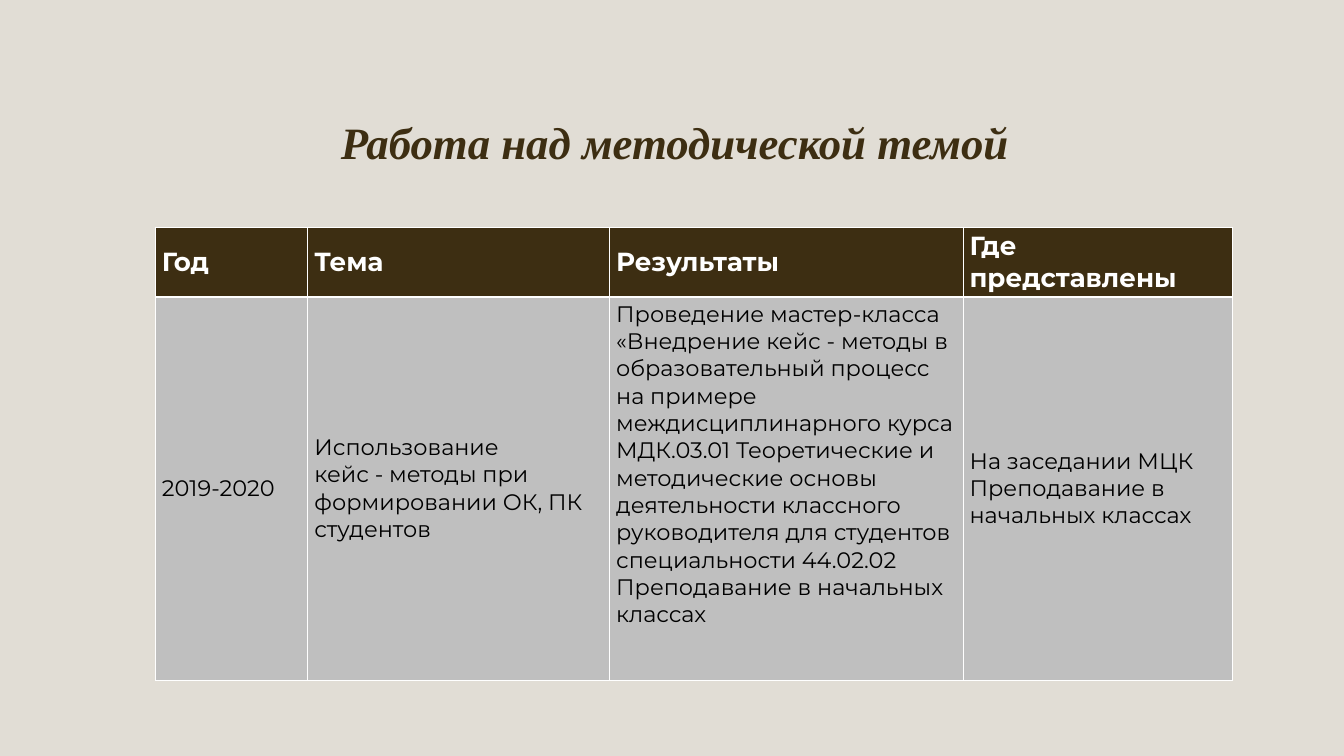
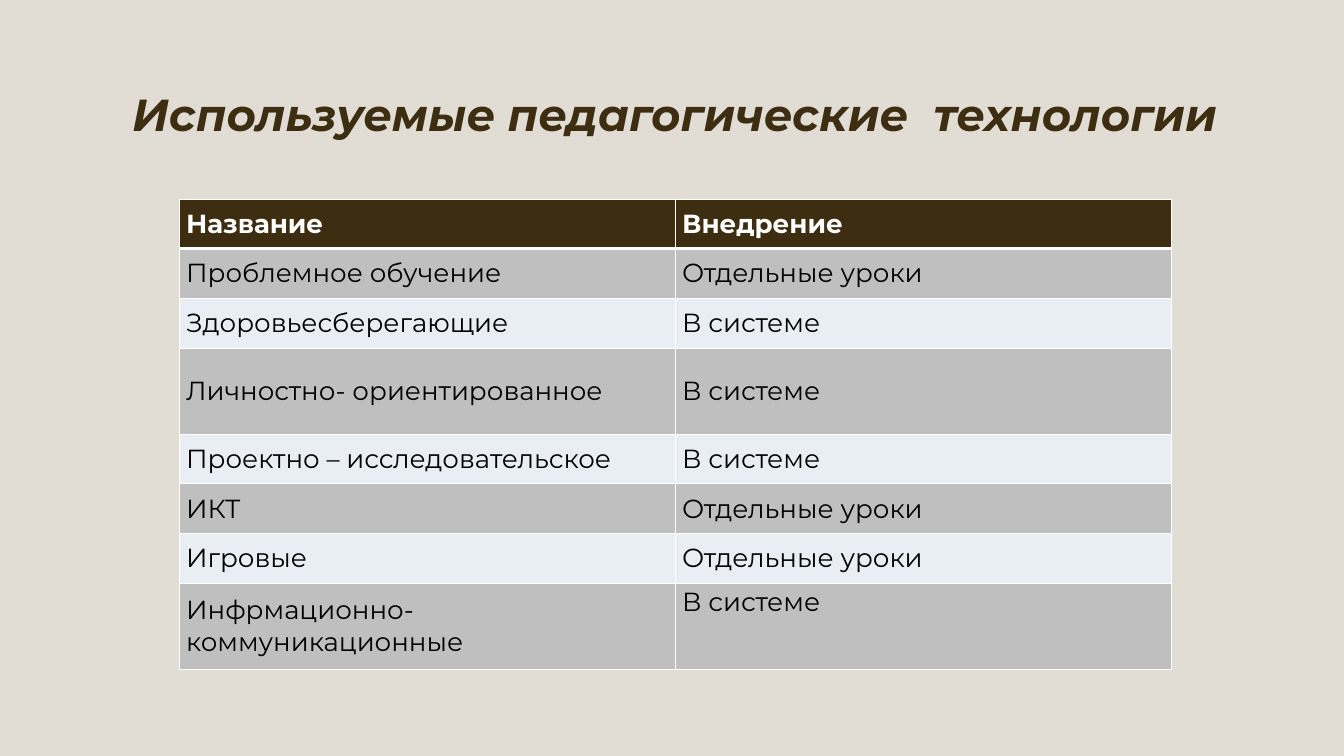
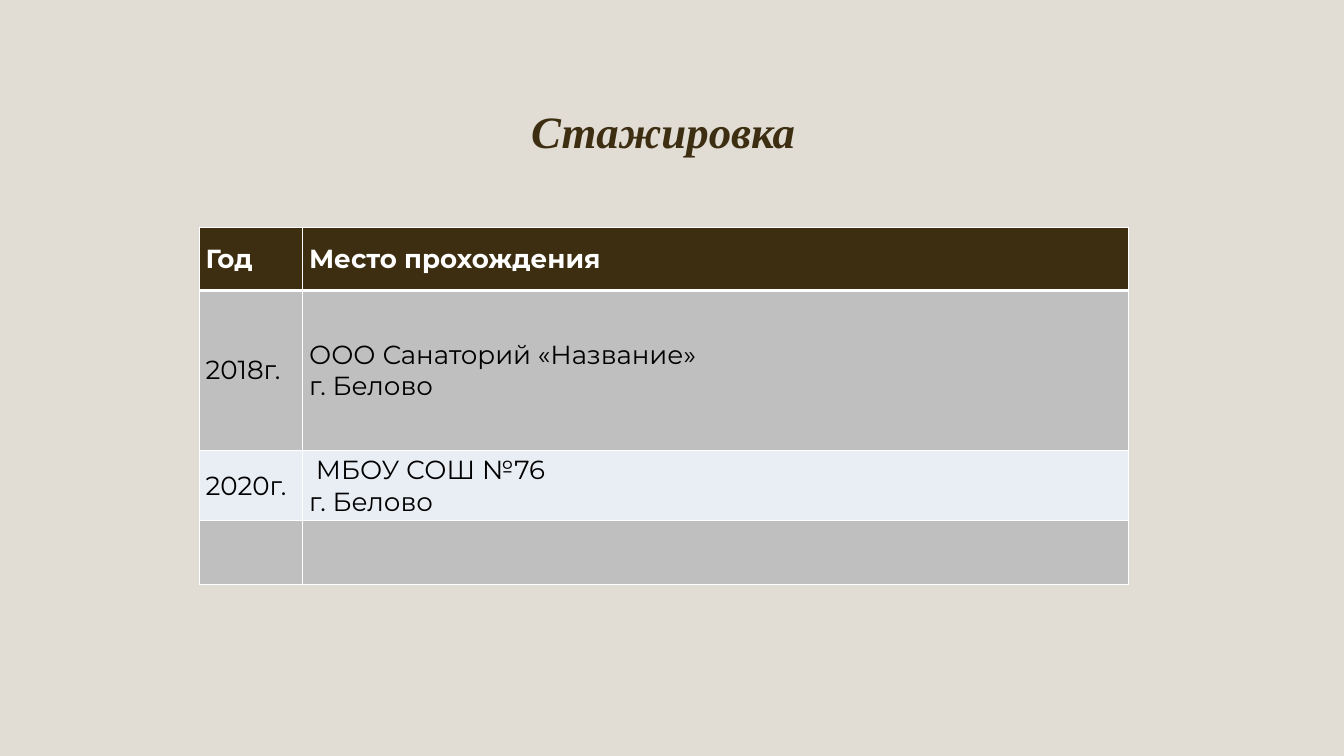
from dataclasses import dataclass

from lxml import etree
from pptx import Presentation
from pptx import util as u
from pptx.dml.color import RGBColor
from pptx.enum import text
from pptx.oxml import ns


@dataclass(frozen=True)
class Theme:
    page: str = "E1DDD5"
    brown: str = "3D2E12"
    white: str = "FFFFFF"
    black: str = "000000"
    bands: tuple = ("BFBFBF", "E9EDF4")
    sans: str = "Montserrat"
    serif: str = "Times New Roman"
    title_size: int = 48
    table_size: int = 28
    dense_size: int = 24
    thin: int = 1
    thick: int = 3


THEME = Theme()
MIDDLE = text.MSO_ANCHOR.MIDDLE
TOP = text.MSO_ANCHOR.TOP


def paint(fill, color):
    fill.solid()
    fill.fore_color.rgb = RGBColor.from_string(color)


def add_span(para, words, font, size, color, bold=False, italic=False):
    span = para.add_run()
    span.text = words
    span.font.name = font
    span.font.size = u.Pt(size)
    span.font.color.rgb = RGBColor.from_string(color)
    span.font.bold = bold
    span.font.italic = italic


def add_page(deck, title, font, left, top):
    """Add a slide with its centred title."""
    page = deck.slides.add_slide(deck.slide_layouts[5])
    box = page.shapes.title
    box.left, box.top = u.Inches(left), u.Inches(top)
    box.width, box.height = u.Inches(16.58), u.Inches(0.81)
    frame = box.text_frame
    frame.margin_left = frame.margin_right = 0
    frame.margin_top = frame.margin_bottom = 0
    frame.word_wrap = True
    frame.auto_size = text.MSO_AUTO_SIZE.SHAPE_TO_FIT_TEXT
    frame.vertical_anchor = TOP
    para = frame.paragraphs[0]
    para.alignment = text.PP_ALIGN.CENTER
    add_span(para, title, font, THEME.title_size, THEME.brown, bold=True, italic=True)
    return page


def add_borders(cell, bottom):
    """Draw white cell edges; they must come before the fill."""
    properties = cell._tc.get_or_add_tcPr()
    widths = {"lnL": THEME.thin, "lnR": THEME.thin, "lnT": THEME.thin, "lnB": bottom}
    for index, (edge, width) in enumerate(widths.items()):
        line = etree.Element(ns.qn(f"a:{edge}"), w=str(u.Pt(width)))
        solid = etree.SubElement(line, ns.qn("a:solidFill"))
        etree.SubElement(solid, ns.qn("a:srgbClr"), val=THEME.white)
        properties.insert(index, line)


def fill_cell(cell, words, size, row, anchor):
    header = row == 0
    paint(cell.fill, THEME.brown if header else THEME.bands[(row - 1) % 2])
    add_borders(cell, THEME.thick if header else THEME.thin)
    cell.vertical_anchor = anchor
    para = cell.text_frame.paragraphs[0]
    for number, line in enumerate(words.split("\n") if words else []):
        if number:
            para.add_line_break()
        add_span(para, line, THEME.sans, size,
                 THEME.white if header else THEME.black, bold=header)


def add_grid(page, left, top, widths, heights, rows,
             body_size=THEME.table_size, top_cells=()):
    """Add a table with a dark header and alternating body rows."""
    table = page.shapes.add_table(
        len(heights), len(widths), u.Inches(left), u.Inches(top),
        u.Inches(sum(widths)), u.Inches(sum(heights))).table
    table.first_row = table.horz_banding = False
    for column, width in zip(table.columns, widths):
        column.width = u.Inches(width)
    for r, (height, row) in enumerate(zip(heights, rows)):
        table.rows[r].height = u.Inches(height)
        for c, words in enumerate(row):
            fill_cell(table.cell(r, c), words,
                      body_size if r else THEME.table_size, r,
                      TOP if (r, c) in top_cells else MIDDLE)


def main():
    deck = Presentation()
    deck.slide_width, deck.slide_height = u.Inches(20), u.Inches(11.25)
    paint(deck.slide_master.background.fill, THEME.page)

    # Methodical topic
    page = add_page(deck, "Работа над методической темой", THEME.serif, 1.75, 1.71)
    topic_rows = [
        ("Год", "Тема", "Результаты", "Где представлены"),
        ("2019-2020",
         "Использование\nкейс - методы при формировании ОК, ПК студентов",
         "Проведение мастер-класса «Внедрение кейс - методы в образовательный "
         "процесс на примере междисциплинарного курса МДК.03.01 Теоретические и "
         "методические основы деятельности классного руководителя для студентов "
         "специальности 44.02.02 Преподавание в начальных классах",
         "На заседании МЦК Преподавание в начальных классах"),
    ]
    add_grid(page, 2.31, 3.38, [2.27, 4.49, 5.26, 4.01], [1.04, 5.7], topic_rows,
             body_size=THEME.dense_size, top_cells=[(1, 2)])

    # Teaching technologies
    page = add_page(deck, "Используемые педагогические  технологии",
                    THEME.sans, 1.75, 1.29)
    single, double = 0.74, 1.28
    lessons, system = "Отдельные уроки", "В системе"
    technology_rows = [
        ("Название", "Внедрение"),
        ("Проблемное обучение", lessons),
        ("Здоровьесберегающие", system),
        ("Личностно- ориентированное", system),
        ("Проектно – исследовательское", system),
        ("ИКТ", lessons),
        ("Игровые", lessons),
        ("Инфрмационно-коммуникационные", system),
    ]
    add_grid(page, 2.67, 2.96, [7.38] * 2, ([single] * 3 + [double]) * 2,
             technology_rows, top_cells=[(7, 1)])

    # Internship
    page = add_page(deck, "Стажировка", THEME.serif, 1.58, 1.54)
    internship_rows = [
        ("Год", "Место прохождения"),
        ("2018г.", "ООО Санаторий «Название»\nг. Белово"),
        ("2020г.", " МБОУ СОШ №76\nг. Белово"),
        ("", ""),
    ]
    add_grid(page, 2.96, 3.38, [1.54, 12.29], [0.94, 2.39, 1.04, 0.94],
             internship_rows)

    deck.save("out.pptx")


if __name__ == "__main__":
    main()
